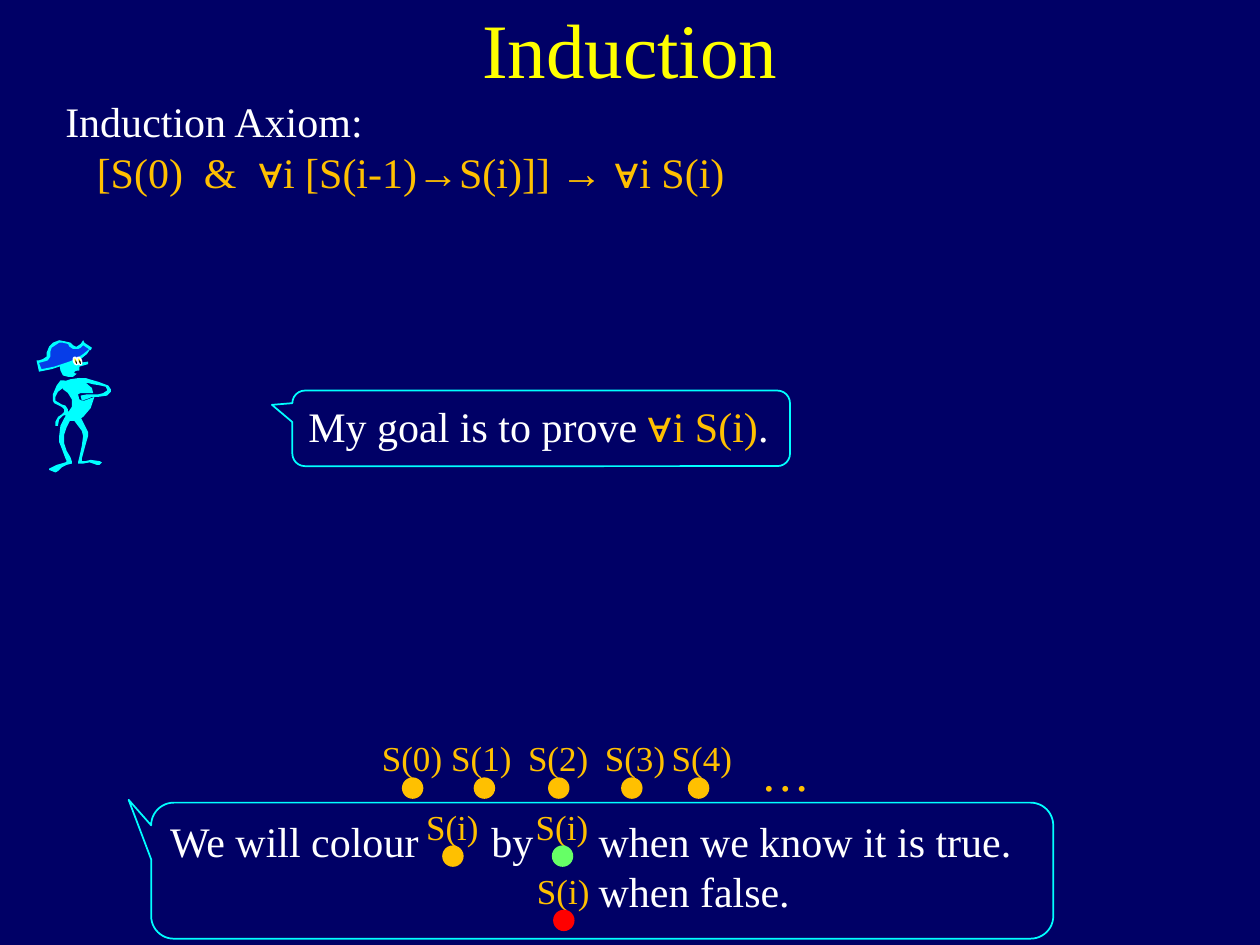
from dataclasses import dataclass

from lxml import etree
from pptx import Presentation
from pptx import util as u
from pptx.dml.color import RGBColor
from pptx.enum import shapes, text
from pptx.oxml.ns import qn


@dataclass(frozen=True)
class Theme:
    background: str = "000066"
    title: str = "FFFF00"
    body: str = "FFFFFF"
    formula: str = "FFC000"
    outline: str = "00FFFF"
    hat: str = "063DE8"
    pupil: str = "000000"
    true: str = "66FF66"
    false: str = "FF0000"
    font: str = "Times New Roman"
    symbol_font: str = "Arial"
    title_size: int = 44
    dots_size: int = 28
    body_size: int = 24
    label_size: int = 20


THEME = Theme()
FORALL = ("∀", THEME.formula, THEME.symbol_font)

# Outlines of the figure, as x, y pairs in hundredths of an inch
HEAD = (63, 288, 61, 282, 57, 280, 52, 280, 50, 282, 47, 288, 48, 294, 50, 298,
        54, 299, 58, 299, 63, 295, 63, 291, 70, 289, 70, 287)
TORSO = (73, 308, 66, 302, 63, 300, 56, 301, 50, 303, 49, 306, 50, 309, 54, 312,
         57, 317, 57, 323, 55, 326, 52, 329, 52, 332, 53, 333, 55, 334, 61, 334,
         66, 331, 72, 324, 75, 315, 67, 318, 65, 318, 63, 317, 62, 313, 64, 312,
         72, 312, 74, 312)
LEFT_ARM = (55, 305, 54, 303, 51, 302, 48, 302, 45, 306, 42, 313, 42, 318, 43, 320,
            49, 323, 51, 325, 51, 327, 49, 329, 46, 331, 44, 335, 44, 338, 46, 338,
            47, 333, 50, 330, 53, 329, 54, 328, 54, 325, 52, 322, 49, 321, 44, 318,
            44, 315, 46, 311, 50, 308)
RIGHT_ARM = (68, 300, 63, 300, 62, 301, 63, 303, 66, 304, 70, 304, 74, 305, 80, 306,
             84, 307, 85, 309, 85, 310, 82, 312, 78, 313, 73, 313, 69, 313, 64, 314,
             65, 318, 71, 316, 73, 315, 78, 315, 85, 314, 88, 311, 88, 309, 86, 306,
             78, 303, 71, 301)
LEFT_LEG = (59, 328, 54, 328, 51, 332, 48, 338, 47, 346, 47, 351, 49, 356, 52, 364,
            53, 366, 52, 367, 45, 369, 39, 372, 39, 373, 44, 375, 46, 374, 49, 371,
            53, 369, 57, 368, 57, 366, 56, 363, 53, 358, 51, 352, 51, 345, 53, 339,
            56, 333, 58, 330)
RIGHT_LEG = (60, 328, 58, 328, 58, 331, 59, 334, 62, 338, 65, 342, 66, 346, 65, 354,
             63, 363, 62, 367, 62, 368, 66, 368, 71, 367, 74, 368, 77, 369, 79, 369,
             81, 367, 79, 366, 72, 365, 68, 366, 65, 366, 65, 364, 68, 353, 70, 346,
             70, 343, 67, 337, 64, 331)
HAT = (72, 277, 66, 272, 64, 274, 61, 276, 58, 276, 55, 274, 52, 272, 47, 271,
       43, 273, 40, 275, 39, 278, 38, 282, 38, 285, 35, 287, 32, 287, 30, 288,
       32, 294, 38, 293, 45, 291, 51, 289, 57, 287, 64, 285, 69, 280)
HAT_TRIM = (69, 281, 64, 285, 57, 288, 47, 291, 41, 293, 31, 295, 29, 286, 31, 286,
            34, 285, 37, 283, 37, 280, 39, 275, 42, 272, 47, 270, 52, 271, 56, 272,
            58, 274, 60, 275, 61, 275, 64, 273, 66, 270, 67, 272, 73, 276, 72, 278,
            66, 274, 64, 276, 62, 277, 60, 277, 58, 277, 55, 275, 54, 273, 50, 272,
            47, 272, 44, 274, 41, 276, 40, 279, 40, 281, 40, 283, 38, 286, 35, 287,
            31, 288, 33, 293, 43, 291, 49, 289, 55, 287, 60, 285, 66, 281, 71, 277,
            71, 278)


def inches(*lengths):
    return [u.Inches(length) for length in lengths]


def paint(shape, fill=None, line=None):
    shape.shadow.inherit = False
    for part, color in ((shape.fill, fill), (shape.line.fill, line)):
        if color:
            part.solid()
            part.fore_color.rgb = RGBColor.from_string(color)
        else:
            part.background()
    if line:
        shape.line.width = u.Pt(1)


def write(shape, lines, size=THEME.body_size, align=text.PP_ALIGN.LEFT,
          anchor=text.MSO_ANCHOR.TOP, wrap=True, grow=False, tabs=()):
    """Fill a shape with lines; each line is a list of (words, colour[, font])."""
    frame = shape.text_frame
    frame.word_wrap = wrap
    frame.vertical_anchor = anchor
    if grow:
        frame.auto_size = text.MSO_AUTO_SIZE.SHAPE_TO_FIT_TEXT
    for number, line in enumerate(lines):
        para = frame.add_paragraph() if number else frame.paragraphs[0]
        para.alignment = align
        if tabs:
            stops = etree.SubElement(para._p.get_or_add_pPr(), qn("a:tabLst"))
            for stop in tabs:
                etree.SubElement(stops, qn("a:tab"), pos=str(u.Inches(stop)), algn="l")
        for words, color, *font in line:
            span = para.add_run()
            span.text = words
            span.font.size = u.Pt(size)
            span.font.name = font[0] if font else THEME.font
            span.font.color.rgb = RGBColor.from_string(color)


def add_text(page, at, lines, **style):
    box = page.shapes.add_textbox(*inches(*at))
    write(box, lines, **style)


def add_ellipse(parent, at, fill, line=None, turn=0):
    oval = parent.shapes.add_shape(shapes.MSO_SHAPE.OVAL, *inches(*at))
    oval.rotation = turn
    paint(oval, fill, line)


def add_callout(page, at, tip, lines, **style):
    kind = shapes.MSO_SHAPE.ROUNDED_RECTANGULAR_CALLOUT
    box = page.shapes.add_shape(kind, *inches(*at))
    box.adjustments[0], box.adjustments[1] = tip
    paint(box, line=THEME.outline)
    write(box, lines, **style)


def add_marker(page, label, left, top, dot_left, color=THEME.formula, width=0.68):
    """A statement label with its state dot below."""
    add_text(page, (left, top, width, 0.44), [[(label, THEME.formula)]],
             size=THEME.label_size, align=text.PP_ALIGN.CENTER, wrap=False, grow=True)
    add_ellipse(page, (dot_left, top + 0.37, 0.17, 0.17), color)


def add_outline(group, numbers, color):
    points = list(zip(numbers[::2], numbers[1::2]))
    builder = group.shapes.build_freeform(*points[0], scale=u.Inches(0.01))
    builder.add_line_segments(points[1:], close=True)
    paint(builder.convert_to_shape(), color)


def add_figure(page):
    group = page.shapes.add_group_shape()
    for part in (HEAD, TORSO, LEFT_ARM, RIGHT_ARM, LEFT_LEG, RIGHT_LEG):
        add_outline(group, part, THEME.outline)
    add_outline(group, HAT, THEME.hat)
    add_outline(group, HAT_TRIM, THEME.outline)
    for left in (0.57, 0.6):
        add_ellipse(group, (left, 2.85, 0.06, 0.03), THEME.title, THEME.body, turn=71.4)
        add_ellipse(group, (left + 0.02, 2.87, 0.03, 0.01), THEME.pupil, turn=71.4)
    add_ellipse(group, (0.59, 2.94, 0.1, 0.03), THEME.background)


def main():
    deck = Presentation()
    deck.slide_width, deck.slide_height = inches(10, 7.5)
    page = deck.slides.add_slide(deck.slide_layouts[6])
    page.background.fill.solid()
    page.background.fill.fore_color.rgb = RGBColor.from_string(THEME.background)

    # Title and axiom
    add_text(page, (0, -0.25, 10, 1.25), [[("Induction", THEME.title)]],
             size=THEME.title_size, align=text.PP_ALIGN.CENTER,
             anchor=text.MSO_ANCHOR.MIDDLE)
    add_text(page, (0.42, 0.71, 8.17, 0.91), [
        [("Induction Axiom:", THEME.body)],
        [("\t[S(0)\t&\t", THEME.formula), FORALL,
         ("i [S(i-1)→S(i)]] ", THEME.formula),
         ("→ ∀", THEME.formula, THEME.symbol_font), ("i S(i)", THEME.formula)],
    ], grow=True, tabs=(0.25, 1.1, 1.53))

    # Speaker and goal
    add_figure(page)
    add_callout(page, (2.32, 3.1, 3.95, 0.6), (-0.541, -0.311), [
        [("My goal is to prove ", THEME.body), FORALL,
         ("i S(i)", THEME.formula), (".", THEME.body)]])

    # Row of statements
    places = ((2.93, 3.19), (3.48, 3.76), (4.09, 4.35), (4.7, 4.93), (5.23, 5.46))
    for index, (left, dot_left) in enumerate(places):
        add_marker(page, f"S({index})", left, 5.8, dot_left)
    add_text(page, (5.94, 5.84, 0.59, 0.57), [[("…", THEME.formula)]],
             size=THEME.dots_size, wrap=False, grow=True)

    # Colour key
    add_callout(page, (1.2, 6.37, 7.16, 1.08), (-0.525, -0.521), [
        [("We will colour\tby\twhen we know it is true.", THEME.body)],
        [("\t\twhen false.", THEME.body)]], tabs=(2.55, 3.4))
    for left, top, color in ((3.28, 6.34, THEME.formula), (4.15, 6.34, THEME.true),
                             (4.16, 6.85, THEME.false)):
        add_marker(page, "S(i)", left, top, left + 0.23, color, width=0.62)

    deck.save("out.pptx")


if __name__ == "__main__":
    main()
